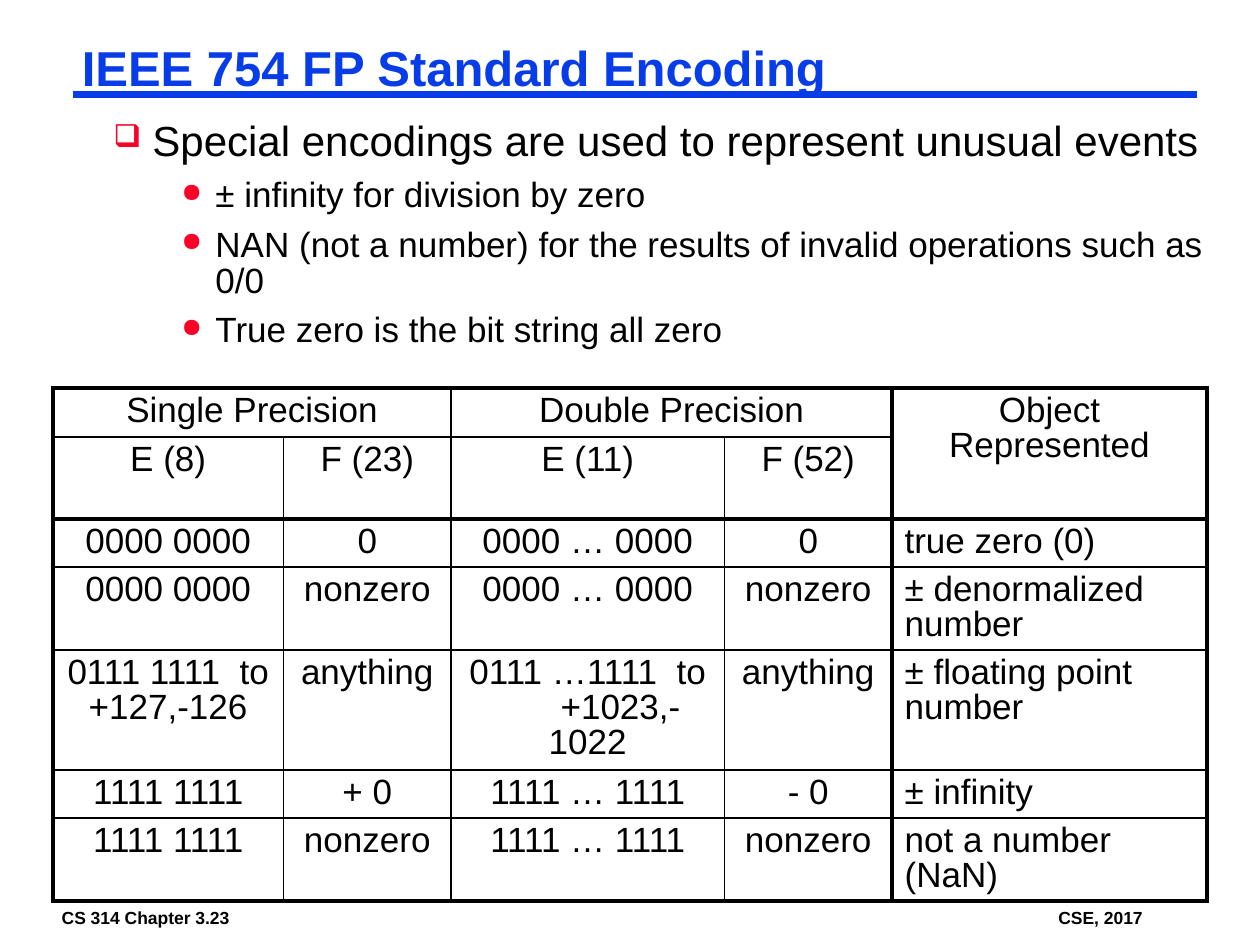
import pptx
import pptx.dml.color
import pptx.enum.shapes
import pptx.enum.text
import pptx.oxml
import pptx.oxml.ns
import pptx.util
from pptx.util import Inches

BLACK = pptx.dml.color.RGBColor(0x00, 0x00, 0x00)
BLUE = pptx.dml.color.RGBColor(0x06, 0x3D, 0xE8)
RED = pptx.dml.color.RGBColor(0xFC, 0x01, 0x28)
CENTER = pptx.enum.text.PP_ALIGN.CENTER
LEFT = pptx.enum.text.PP_ALIGN.LEFT
NAMESPACE = pptx.oxml.ns.nsdecls("a")

THIN, THICK = 1, 2.25
COLUMN_WIDTHS = [1.83, 1.33, 2.17, 1.33, 2.5]
ROW_HEIGHTS = [0.39, 0.65, 0.38, 0.66, 0.94, 0.38, 0.66]
COLUMN_RULES = [THICK, THIN, THIN, THIN, THICK, THICK]
ROW_RULES = [THICK, THIN, THICK, THIN, THIN, THIN, THIN, THICK]

ENCODINGS = [
    ["Single Precision", "", "Double Precision", "", "Object Represented"],
    ["E (8)", "F (23)", "E (11)", "F (52)", ""],
    ["0000 0000", "0", "0000 … 0000", "0", "true zero (0)"],
    ["0000 0000", "nonzero", "0000 … 0000", "nonzero", "± denormalized number"],
    ["0111 1111  to +127,-126", "anything", "0111 …1111  to", "anything",
     "± floating point number"],
    ["1111 1111", "+ 0", "1111 … 1111", "- 0", "± infinity"],
    ["1111 1111", "nonzero", "1111 … 1111", "nonzero", "not a number (NaN)"],
]
HEADER_MERGES = [((0, 0), (0, 1)), ((0, 2), (0, 3)), ((0, 4), (1, 4))]

EVENTS = [
    "± infinity for division by zero",
    "NAN (not a number) for the results of invalid operations such as 0/0",
    "True zero is the bit string all zero",
]


def append_xml(parent, *fragments):
    for tag, attributes, content in fragments:
        parent.append(pptx.oxml.parse_xml(
            f"<a:{tag} {NAMESPACE} {attributes}>{content}</a:{tag}>"))


def write(paragraph, text, size=20, color=BLACK, bold=False, align=LEFT,
          line_spacing=None, space_before=None, margin=0, indent=0, bullet=None):
    """Fill a paragraph; space_before is a percentage, margin and indent are inches."""
    paragraph.alignment = align
    if line_spacing:
        paragraph.line_spacing = line_spacing
    properties = paragraph._p.get_or_add_pPr()
    properties.set("marL", str(Inches(margin)))
    properties.set("indent", str(Inches(indent)))
    if space_before:
        append_xml(properties, ("spcBef", "", f'<a:spcPct val="{space_before * 1000}"/>'))
    if bullet:
        append_xml(properties,
                   ("buClr", "", f'<a:srgbClr val="{RED}"/>'),
                   ("buSzPct", 'val="75000"', ""),
                   ("buChar", f'char="{bullet}"', ""))
    run = paragraph.add_run()
    run.text = text
    run.font.name = "Arial"
    run.font.size = pptx.util.Pt(size)
    run.font.bold = bold
    run.font.color.rgb = color


class EncodingSlide:
    def __init__(self, slide):
        self.slide = slide

    def text_box(self, left, top, width, height, wrap=True):
        box = self.slide.shapes.add_textbox(
            Inches(left), Inches(top), Inches(width), Inches(height))
        frame = box.text_frame
        frame.word_wrap = wrap
        frame.auto_size = pptx.enum.text.MSO_AUTO_SIZE.SHAPE_TO_FIT_TEXT
        frame.margin_left = frame.margin_right = Inches(0.07)
        frame.margin_top = frame.margin_bottom = Inches(0.03)
        return frame

    def rule(self, left, right, y, color, weight):
        line = self.slide.shapes.add_connector(
            pptx.enum.shapes.MSO_CONNECTOR.STRAIGHT,
            Inches(left), Inches(y), Inches(right), Inches(y))
        line.line.color.rgb = color
        line.line.width = pptx.util.Pt(weight)
        append_xml(line._element.spPr, ("effectLst", "", ""))

    def table(self, left, top, rows):
        frame = self.slide.shapes.add_table(
            len(rows), len(COLUMN_WIDTHS), Inches(left), Inches(top),
            Inches(sum(COLUMN_WIDTHS)), Inches(sum(ROW_HEIGHTS)))
        grid = frame.table
        grid.first_row = grid.horz_banding = False
        for column, width in zip(grid.columns, COLUMN_WIDTHS):
            column.width = Inches(width)
        for row, height in zip(grid.rows, ROW_HEIGHTS):
            row.height = Inches(height)
        for first, last in HEADER_MERGES:
            grid.cell(*first).merge(grid.cell(*last))
        for r, row in enumerate(rows):
            for c, text in enumerate(row):
                cell = grid.cell(r, c)
                cell.margin_bottom = 0
                if not cell.is_spanned:
                    self.border(cell, r, c)
                    is_object = c == 4 and r > 1
                    write(cell.text_frame.paragraphs[0], text, line_spacing=0.9,
                          space_before=65, align=LEFT if is_object else CENTER)
                cell.fill.background()
        return grid

    def border(self, cell, row, column):
        """Rule all four sides of a cell, counting the rows and columns it spans."""
        right = column + (cell.span_width if cell.is_merge_origin else 1)
        bottom = row + (cell.span_height if cell.is_merge_origin else 1)
        weights = {"lnL": COLUMN_RULES[column], "lnR": COLUMN_RULES[right],
                   "lnT": ROW_RULES[row], "lnB": ROW_RULES[bottom]}
        solid = f'<a:solidFill><a:srgbClr val="{BLACK}"/></a:solidFill>'
        append_xml(cell._tc.get_or_add_tcPr(),
                   *((side, f'w="{pptx.util.Pt(weight)}"', solid)
                     for side, weight in weights.items()))


def main():
    deck = pptx.Presentation()
    deck.slide_width, deck.slide_height = Inches(10), Inches(7.5)
    page = EncodingSlide(deck.slides.add_slide(deck.slide_layouts[6]))

    chapter = page.text_box(0.42, 7.17, 1.5, 0.22, wrap=False)
    write(chapter.paragraphs[0], "CS 314 Chapter 3.23", size=10, bold=True)
    course = page.text_box(8.33, 7.17, 0.81, 0.22, wrap=False)
    write(course.paragraphs[0], "CSE, 2017", size=10, bold=True)

    page.rule(0.58, 9.5, 0.75, BLUE, 4.5)
    title = page.text_box(0.58, 0.33, 8.92, 0.46)
    write(title.paragraphs[0], "IEEE 754 FP Standard Encoding", size=28,
          color=BLUE, bold=True, line_spacing=0.87)

    body = page.text_box(0.83, 0.92, 8.92, 2.08)
    write(body.paragraphs[0], "Special encodings are used to represent unusual events",
          size=24, line_spacing=0.9, space_before=65, margin=0.31, indent=-0.31,
          bullet="❑")
    for event in EVENTS:
        paragraph = body.add_paragraph()
        paragraph.level = 1
        write(paragraph, event, line_spacing=0.85, space_before=40,
              margin=0.81, indent=-0.27, bullet="●")

    encodings = page.table(0.42, 3.08, ENCODINGS)
    double_range = encodings.cell(4, 2).text_frame.add_paragraph()
    write(double_range, "+1023,-1022", align=CENTER, line_spacing=0.9, indent=0.52)

    deck.save("out.pptx")


if __name__ == "__main__":
    main()
